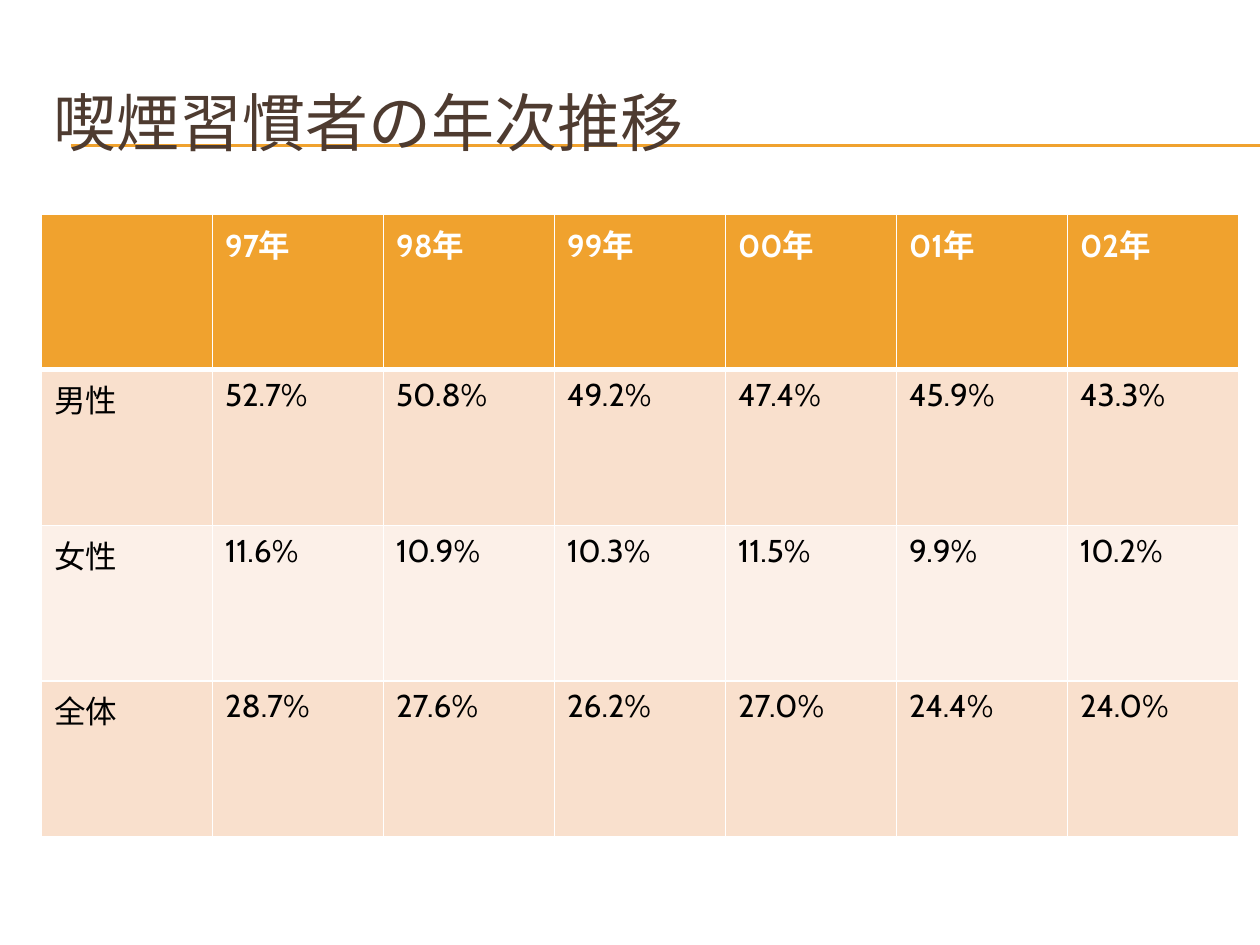
from lxml.etree import SubElement
from pptx import Presentation
from pptx.dml.color import RGBColor
from pptx.enum.shapes import MSO_CONNECTOR
from pptx.enum.text import MSO_ANCHOR
from pptx.oxml import parse_xml
from pptx.oxml.ns import nsdecls, qn
from pptx.util import Inches, Pt

SLIDE_WIDTH, SLIDE_HEIGHT = Inches(10), Inches(7.5)
LEFT, CONTENT_WIDTH = Inches(0.33), Inches(9.5)
TABLE_TOP, TABLE_HEIGHT = Inches(1.7), Inches(4.94)

COLORS = {
    "accent": "F0A22E",
    "title": "4E3B30",
    "white": "FFFFFF",
    "text": "000000",
    "odd_row": "F9E0CD",
    "even_row": "FCF0E8",
}

FORMATS = {
    "title": {"name": "Cabin", "size": Pt(36), "bold": False},
    "header": {"name": "Cabin", "size": Pt(18), "bold": True},
    "body": {"name": "Cabin", "size": Pt(18), "bold": False},
}

SMOKING_RATES = [
    ["", "97年", "98年", "99年", "00年", "01年", "02年"],
    ["男性", "52.7%", "50.8%", "49.2%", "47.4%", "45.9%", "43.3%"],
    ["女性", "11.6%", "10.9%", "10.3%", "11.5%", "9.9%", "10.2%"],
    ["全体", "28.7%", "27.6%", "26.2%", "27.0%", "24.4%", "24.0%"],
]


def color(name):
    return RGBColor.from_string(COLORS[name])


def write_text(text_frame, text, format_name, color_name):
    paragraph = text_frame.paragraphs[0]
    if text:
        paragraph.add_run().text = text
    for font in [paragraph.font] + [run.font for run in paragraph.runs]:
        for attribute, value in FORMATS[format_name].items():
            setattr(font, attribute, value)
        font.color.rgb = color(color_name)


def add_title(slide, text):
    shape = slide.shapes.add_textbox(LEFT, Inches(0.5), CONTENT_WIDTH, Inches(0.92))
    shape.text_frame.word_wrap = True
    shape.text_frame.vertical_anchor = MSO_ANCHOR.MIDDLE
    write_text(shape.text_frame, text, "title", "title")


def add_rule(slide, top):
    connector = slide.shapes.add_connector(
        MSO_CONNECTOR.STRAIGHT, Inches(0.56), top, SLIDE_WIDTH, top
    )
    connector.line.color.rgb = color("accent")
    connector.line.width = Pt(0.75)
    SubElement(connector._element.spPr, qn("a:effectLst"))


def set_borders(cell, widths):
    properties = cell._tc.get_or_add_tcPr()
    for position, (side, width) in enumerate(widths.items()):
        border = parse_xml(
            f'<a:ln{side} {nsdecls("a")} w="{Pt(width)}"><a:solidFill>'
            f'<a:srgbClr val="{COLORS["white"]}"/></a:solidFill></a:ln{side}>'
        )
        properties.insert(position, border)


def format_cell(cell, text, row_index):
    is_header = row_index == 0
    row_fill = "odd_row" if row_index % 2 else "even_row"
    cell.fill.solid()
    cell.fill.fore_color.rgb = color("accent" if is_header else row_fill)
    write_text(
        cell.text_frame,
        text,
        "header" if is_header else "body",
        "white" if is_header else "text",
    )
    top = 3 if row_index == 1 else 1
    bottom = 3 if is_header else 1
    set_borders(cell, {"L": 1, "R": 1, "T": top, "B": bottom})


def add_data_table(slide, rows):
    row_count, column_count = len(rows), len(rows[0])
    table = slide.shapes.add_table(
        row_count, column_count, LEFT, TABLE_TOP, CONTENT_WIDTH, TABLE_HEIGHT
    ).table
    for row_index, row in enumerate(rows):
        for column_index, text in enumerate(row):
            format_cell(table.cell(row_index, column_index), text, row_index)


def main():
    presentation = Presentation()
    presentation.slide_width = SLIDE_WIDTH
    presentation.slide_height = SLIDE_HEIGHT
    slide = presentation.slides.add_slide(presentation.slide_layouts[6])
    for top in (Inches(1.15), Inches(1.16)):
        add_rule(slide, top)
    add_title(slide, "喫煙習慣者の年次推移")
    add_data_table(slide, SMOKING_RATES)
    presentation.save("out.pptx")


if __name__ == "__main__":
    main()
